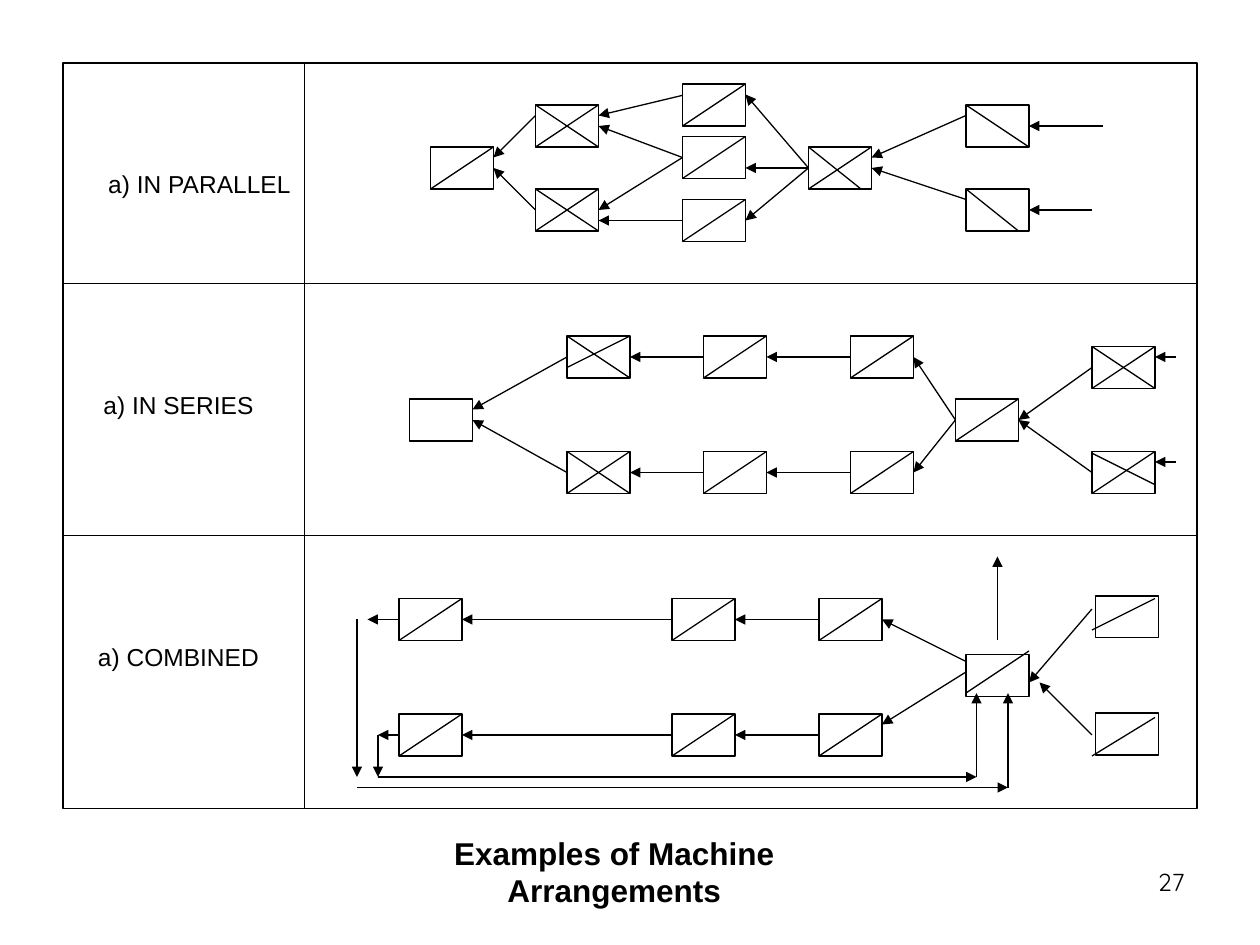
"""Build a slide of machine arrangements: in parallel, in series and combined."""
import pptx
import pptx.dml.color
import pptx.enum.shapes
import pptx.enum.text
import pptx.oxml.ns
import pptx.util
from lxml import etree

Pt = pptx.util.Pt
ALIGN = pptx.enum.text.PP_ALIGN
ANCHOR = pptx.enum.text.MSO_ANCHOR
COLORS = {"ink": "000000"}
INK = pptx.dml.color.RGBColor.from_string(COLORS["ink"])
BOX_W, BOX_H = 36, 24

prs = pptx.Presentation()
prs.slide_width, prs.slide_height = Pt(720), Pt(540)
s = prs.slides.add_slide(prs.slide_layouts[5])
sites = {}


def write_text(sp, text, size=14, font="Arial", bold=False, align=ALIGN.CENTER,
               anchor=ANCHOR.MIDDLE, wrap=False):
    tf = sp.text_frame
    tf.auto_size = pptx.enum.text.MSO_AUTO_SIZE.NONE
    tf.word_wrap, tf.vertical_anchor = wrap, anchor
    p = tf.paragraphs[0]
    p.alignment = align
    r = p.add_run()
    r.text = text
    r.font.size, r.font.name, r.font.bold = Pt(size), font, bold
    r.font.color.rgb = INK


def add_line(x1, y1, x2, y2, arrow=False):
    c = s.shapes.add_connector(pptx.enum.shapes.MSO_CONNECTOR.STRAIGHT,
                               Pt(x1), Pt(y1), Pt(x2), Pt(y2))
    c.line.color.rgb, c.line.width = INK, Pt(0.75)
    if arrow:
        ln = c.line._get_or_add_ln()
        etree.SubElement(ln, pptx.oxml.ns.qn("a:tailEnd"), type="triangle")
    etree.SubElement(c._element.spPr, pptx.oxml.ns.qn("a:effectLst"))
    if (x1, y1) in sites:
        c.begin_connect(*sites[x1, y1])
    if (x2, y2) in sites:
        c.end_connect(*sites[x2, y2])


title = s.shapes.title
title.left, title.top, title.width, title.height = Pt(192), Pt(486), Pt(318), Pt(24)
write_text(title, "Examples of Machine Arrangements", size=18, bold=True)

labels = [("a) IN PARALLEL", 54, 96), ("a) IN SERIES", 42, 222), ("a) COMBINED", 42, 366)]
for text, x, y in labels:
    write_text(s.shapes.add_textbox(Pt(x), Pt(y), Pt(120), Pt(18)), text)

number = s.shapes.add_textbox(Pt(516), Pt(492), Pt(168), Pt(37))
write_text(number, "27", font="Quicksand", align=ALIGN.RIGHT, anchor=ANCHOR.TOP, wrap=True)

parallel = [
    (246, 84, "/"), (306, 60, "/\\"), (306, 108, "/\\"),
    (390, 48, "/"), (390, 78, "/"), (390, 114, "/"),
    (462, 84, "/"), (552, 60, "\\"), (552, 108, ""),
]
series = [
    (234, 228, ""), (324, 192, "\\"), (324, 258, "/\\"),
    (402, 192, "/"), (402, 258, "/"), (486, 192, "/"), (486, 258, "/"),
    (546, 228, "/"), (624, 198, "/\\"), (624, 258, "/"),
]
combined = [(x, y, "/") for x in (228, 384, 468) for y in (342, 408)]
combined += [(552, 374, ""), (626, 340.5, ""), (626, 407.5, "")]

frame = (36, 36, 648, 426)
machines = parallel + series + combined
for x, y, w, h in [frame] + [(x, y, BOX_W, BOX_H) for x, y, marks in machines]:
    sp = s.shapes.add_shape(pptx.enum.shapes.MSO_SHAPE.RECTANGLE, Pt(x), Pt(y), Pt(w), Pt(h))
    sp.shadow.inherit = False
    sp.fill.background()
    sp.line.color.rgb, sp.line.width = INK, Pt(0.75)
    if (x, y, w, h) != frame:
        sites[x, y + h / 2] = (sp, 1)
        sites[x + w, y + h / 2] = (sp, 3)

for y in (162, 306):
    add_line(36, y, 684, y)
add_line(174, 36, 174, 462)

for x, y, marks in machines:
    if "/" in marks:
        add_line(x + BOX_W, y, x, y + BOX_H)
    if "\\" in marks:
        add_line(x, y, x + BOX_W, y + BOX_H)

short_marks = [
    (462, 84, 492, 108), (552, 108, 582, 132), (360, 192, 324, 210),
    (624, 259, 660, 277), (588, 372, 552, 396), (660, 342, 624, 360),
    (660, 410, 624, 432),
]
for mark in short_marks:
    add_line(*mark)

parallel_flow = [
    (630, 72, 588, 72), (624, 120, 588, 120), (552, 66, 498, 90), (552, 114, 498, 96),
    (462, 96, 426, 54), (462, 96, 426, 96), (462, 96, 426, 126),
    (390, 90, 342, 72), (390, 90, 342, 120), (390, 126, 342, 126), (390, 54.5, 342, 66),
    (306, 66, 282, 90), (306, 120, 282, 96),
]
series_flow = [
    (672, 204, 660, 204), (672, 264, 660, 264), (624, 210, 582, 240), (624, 270, 582, 240),
    (546, 240, 522, 204), (546, 240, 522, 270), (324, 204, 270, 234), (324, 270, 270, 240),
]
series_flow += [(x1, y, x2, y) for x1, x2 in ((486, 438), (402, 360)) for y in (204, 270)]
combined_flow = [(x1, y, x2, y) for x1, x2 in ((468, 420), (384, 264)) for y in (354, 420)]
combined_flow += [
    (552, 378, 504, 354), (552, 384, 504, 414), (624, 348, 588, 390), (624, 420, 594, 390),
    (570, 366, 570, 318), (228, 354, 210, 354), (204, 354, 204, 444),
    (204, 450, 576, 450), (576, 450, 576, 396), (228, 420, 216, 420),
    (216, 420, 216, 444), (216, 444, 558, 444), (558, 444, 558, 396),
]
for flow in parallel_flow + series_flow + combined_flow:
    add_line(*flow, arrow=True)

prs.save("out.pptx")
